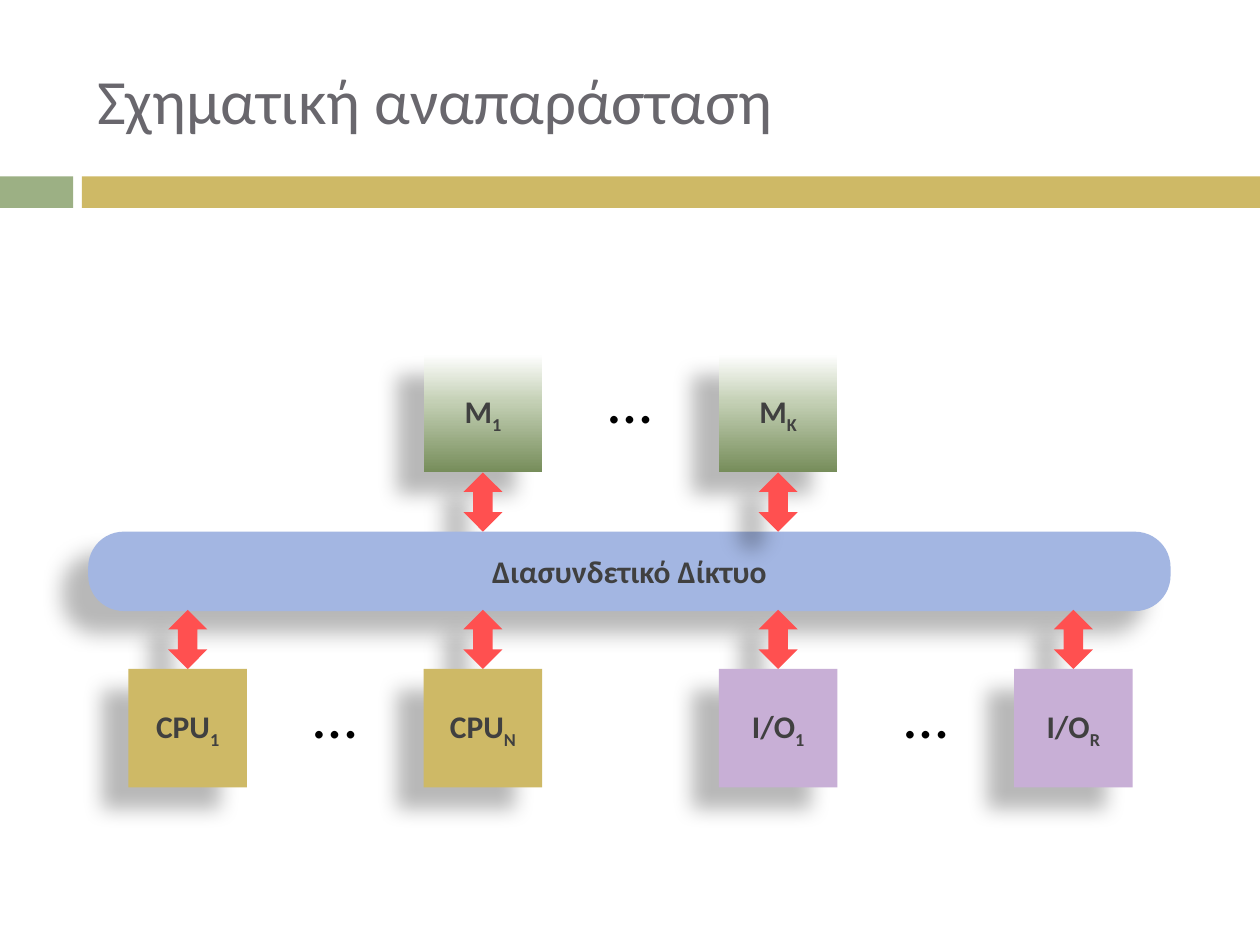
from dataclasses import dataclass

from lxml.etree import SubElement
from pptx import Presentation
from pptx.dml.color import RGBColor
from pptx.enum.shapes import MSO_SHAPE
from pptx.enum.text import MSO_ANCHOR, MSO_AUTO_SIZE, PP_ALIGN
from pptx.oxml.ns import qn
from pptx.util import Inches, Pt

FIRST_COLUMN, PITCH = 1.02, 2.343
UNIT_SIZE = 0.94
ARROW_WIDTH, ARROW_HEIGHT = 0.31, 0.47
MEMORY_TOP, BUS_TOP, DEVICE_TOP = 2.81, 4.22, 5.31
MEMORY_STOPS = ((0, "768D5A"), (60, "C4D0B5"), (100, "FFFFFF"))
GOLD, GREEN, LILAC, BLUE, RED = "CEB966", "9CB084", "C8AFD6", "A3B6E2", "FF5050"
DARK_TEXT = "404040"


@dataclass
class Unit:
    name: str
    index: str
    column: int
    top: float
    color: str | None = None


@dataclass
class Gap:
    column: int
    top: float


def rgb(color: str) -> RGBColor:
    return RGBColor.from_string(color)


def style(paragraph, size: int, color: str, bold: bool = False,
          align=PP_ALIGN.CENTER) -> None:
    paragraph.alignment = align
    font = paragraph.font
    font.name, font.size, font.bold = "Calibri", Pt(size), bold
    font.color.rgb = rgb(color)


def add_block(slide, kind, left: float, top: float, width: float, height: float,
              color: str | None):
    block = slide.shapes.add_shape(
        kind, Inches(left), Inches(top), Inches(width), Inches(height))
    block.line.fill.background()
    block.shadow.inherit = False
    if color:
        block.fill.solid()
        block.fill.fore_color.rgb = rgb(color)
    else:
        fill_memory(block)
    return block


def fill_memory(block) -> None:
    block.fill.gradient()
    block.fill.gradient_angle = 90
    stops = block._element.spPr.find(".//" + qn("a:gsLst"))
    for stop in list(stops):
        stops.remove(stop)
    for position, color in MEMORY_STOPS:
        stop = SubElement(stops, qn("a:gs"), pos=str(position * 1000))
        SubElement(stop, qn("a:srgbClr"), val=color)


def cast_shadow(block) -> None:
    effects = block._element.spPr.find(qn("a:effectLst"))
    shadow = SubElement(
        effects, qn("a:outerShdw"), blurRad=str(Pt(11.8)), dist=str(Pt(19.7)),
        dir=str(141 * 60000), algn="tl", rotWithShape="0")
    tint = SubElement(shadow, qn("a:srgbClr"), val="000000")
    SubElement(tint, qn("a:alpha"), val="28000")


def add_label(block, text: str, index: str = "") -> None:
    block.text_frame.vertical_anchor = MSO_ANCHOR.MIDDLE
    paragraph = block.text_frame.paragraphs[0]
    style(paragraph, 18, DARK_TEXT, bold=True)
    paragraph.add_run().text = text
    if index:
        subscript = paragraph.add_run()
        subscript.text = index
        subscript.font._element.set("baseline", "-25000")


def column_left(column: int) -> float:
    return FIRST_COLUMN + column * PITCH


def add_unit(slide, unit: Unit) -> None:
    left = column_left(unit.column)
    above_bus = unit.top < BUS_TOP
    arrow_top = unit.top + UNIT_SIZE if above_bus else unit.top - ARROW_HEIGHT
    arrow_left = left + (UNIT_SIZE - ARROW_WIDTH) / 2

    def add_arrow() -> None:
        cast_shadow(add_block(slide, MSO_SHAPE.UP_DOWN_ARROW, arrow_left, arrow_top,
                              ARROW_WIDTH, ARROW_HEIGHT, RED))

    if not above_bus:
        add_arrow()
    block = add_block(slide, MSO_SHAPE.RECTANGLE, left, unit.top,
                      UNIT_SIZE, UNIT_SIZE, unit.color)
    cast_shadow(block)
    add_label(block, unit.name, unit.index)
    if above_bus:
        add_arrow()


def add_bus(slide) -> None:
    bus = add_block(slide, MSO_SHAPE.ROUNDED_RECTANGLE, 0.7, BUS_TOP, 8.59, 0.63, BLUE)
    bus.adjustments[0] = 0.448
    cast_shadow(bus)
    add_label(bus, "Διασυνδετικό Δίκτυο")


def add_ellipsis(slide, gap: Gap) -> None:
    dots = slide.shapes.add_textbox(
        Inches(column_left(gap.column) + UNIT_SIZE), Inches(gap.top),
        Inches(PITCH - UNIT_SIZE), Inches(0.71))
    frame = dots.text_frame
    frame.word_wrap = True
    frame.auto_size = MSO_AUTO_SIZE.SHAPE_TO_FIT_TEXT
    frame.text = "…"
    style(frame.paragraphs[0], 36, "000000")


def add_title(slide) -> None:
    title = slide.shapes.title
    title.left, title.top = Inches(0.67), Inches(0.25)
    title.width, title.height = Inches(8.92), Inches(1.08)
    title.text_frame.text = "Σχηματική αναπαράσταση"
    title.text_frame.vertical_anchor = MSO_ANCHOR.MIDDLE
    style(title.text_frame.paragraphs[0], 36, "69676D", align=PP_ALIGN.LEFT)


def main() -> None:
    presentation = Presentation()
    presentation.slide_width, presentation.slide_height = Inches(10), Inches(7.5)
    slide = presentation.slides.add_slide(presentation.slide_layouts[5])

    add_title(slide)
    add_block(slide, MSO_SHAPE.RECTANGLE, 0, 1.4, 0.58, 0.25, GREEN)
    add_block(slide, MSO_SHAPE.RECTANGLE, 0.65, 1.4, 9.35, 0.25, GOLD)

    add_unit(slide, Unit("M", "1", 1, MEMORY_TOP))
    add_bus(slide)
    for part in (
        Unit("CPU", "1", 0, DEVICE_TOP, GOLD),
        Unit("CPU", "N", 1, DEVICE_TOP, GOLD),
        Gap(0, DEVICE_TOP),
        Unit("M", "K", 2, MEMORY_TOP),
        Gap(1, MEMORY_TOP),
        Unit("I/O", "1", 2, DEVICE_TOP, LILAC),
        Unit("I/O", "R", 3, DEVICE_TOP, LILAC),
        Gap(2, DEVICE_TOP),
    ):
        if isinstance(part, Unit):
            add_unit(slide, part)
        else:
            add_ellipsis(slide, part)

    presentation.save("out.pptx")


if __name__ == "__main__":
    main()
